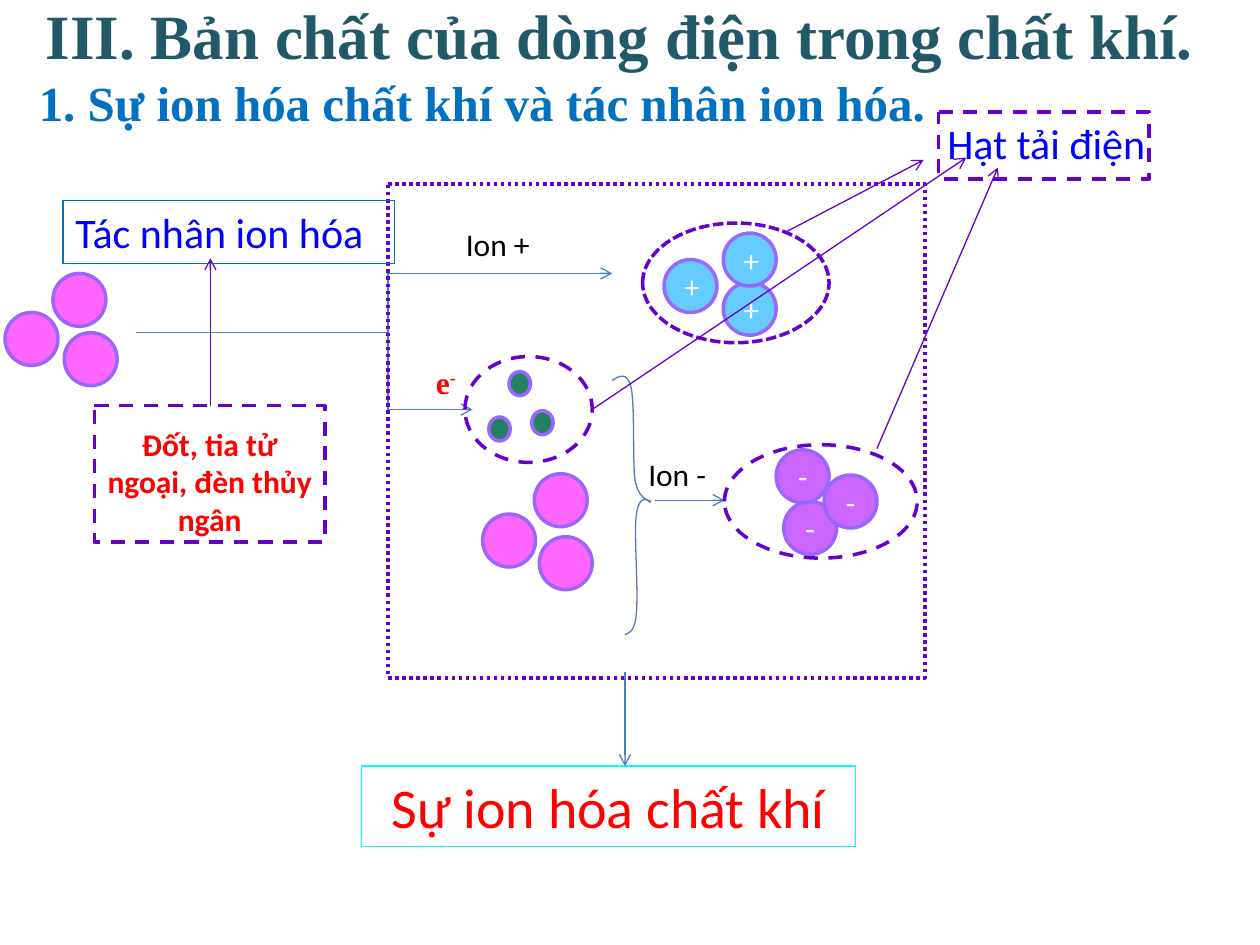
from lxml import etree
from pptx import Presentation
from pptx.dml.color import RGBColor
from pptx.enum.dml import MSO_LINE
from pptx.enum.shapes import MSO_CONNECTOR, MSO_SHAPE
from pptx.enum.text import MSO_ANCHOR, MSO_AUTO_SIZE, PP_ALIGN
from pptx.oxml.ns import qn
from pptx.util import Inches, Pt

COLORS = {
    "pink": "FF66FF", "sky": "66CCFF", "violet": "CC66FF", "green": "238162",
    "rim": "9966FF", "purple": "6600CC", "steel": "4B7EBC", "cyan": "00FFFF",
    "blue": "0070C0", "ink_blue": "0000FF", "red": "FF0000", "teal": "215968",
    "white": "FFFFFF", "black": "000000",
}
SERIF = "Times New Roman"
CURVE_STEPS = 12


def color(name):
    return RGBColor.from_string(COLORS[name])


class Diagram:
    """Holds the shared style and the current slide."""

    font = "Calibri"
    thin, thick = Pt(0.75), Pt(2)

    def __init__(self, page):
        self.page = page
        self.shapes = page.shapes

    def outline(self, shape, line, width, dash=None):
        shape.line.color.rgb = color(line)
        shape.line.width = width
        if dash:
            shape.line.dash_style = dash

    def shape(self, kind, place, line, width=thick, fill=None, dash=None):
        shape = self.shapes.add_shape(kind, *map(Inches, place))
        shape.shadow.inherit = False
        if fill:
            shape.fill.solid()
            shape.fill.fore_color.rgb = color(fill)
        else:
            shape.fill.background()
        self.outline(shape, line, width, dash)
        return shape

    def add_text(self, shape, text, size, ink, align=PP_ALIGN.CENTER,
                 anchor=MSO_ANCHOR.TOP, grow=True, bold=False, font=None):
        frame = shape.text_frame
        settings = {"word_wrap": True, "vertical_anchor": anchor}
        if grow:
            settings["auto_size"] = MSO_AUTO_SIZE.SHAPE_TO_FIT_TEXT
        for name, value in settings.items():
            setattr(frame, name, value)
        para = frame.paragraphs[0]
        para.alignment = align
        return self.span(para, text, size, ink, bold, font)

    def span(self, para, text, size, ink, bold=False, font=None):
        span = para.add_run()
        span.text = text
        style = {"name": font or self.font, "size": Pt(size), "bold": bold}
        for name, value in style.items():
            setattr(span.font, name, value)
        span.font.color.rgb = color(ink)
        return span

    def label(self, place, text, size, ink, **style):
        box = self.shapes.add_textbox(*map(Inches, place))
        self.add_text(box, text, size, ink, **style)
        return box

    def frame(self, place, text, size, ink, line, **style):
        box = self.shape(MSO_SHAPE.RECTANGLE, place, line, self.thin)
        self.add_text(box, text, size, ink, **style)

    def particles(self, corners, fill, sign=None, size=(0.42, 0.42)):
        for corner in corners:
            ball = self.shape(MSO_SHAPE.OVAL, (*corner, *size), "rim", fill=fill)
            if sign:
                self.add_text(ball, sign, 18, "white",
                              anchor=MSO_ANCHOR.MIDDLE, grow=False)

    def connect(self, start, end, line="steel", arrow=True):
        link = self.shapes.add_connector(
            MSO_CONNECTOR.STRAIGHT, *map(Inches, (*start, *end)))
        self.outline(link, line, self.thin)
        if arrow:
            etree.SubElement(link.get_or_add_ln(), qn("a:tailEnd"), type="arrow")
        etree.SubElement(link.element.spPr, qn("a:effectLst"))

    def curve(self, start, *segments):
        points, origin = [], start
        for first, second, end in segments:
            knots = (origin, first, second, end)
            for step in range(1, CURVE_STEPS + 1):
                t = step / CURVE_STEPS
                weights = ((1 - t) ** 3, 3 * t * (1 - t) ** 2,
                           3 * t ** 2 * (1 - t), t ** 3)
                points.append(tuple(
                    Inches(sum(w * knot[axis] for w, knot in zip(weights, knots)))
                    for axis in (0, 1)))
            origin = end
        builder = self.shapes.build_freeform(*map(Inches, start), scale=1.0)
        builder.add_line_segments(points, close=False)
        shape = builder.convert_to_shape()
        shape.shadow.inherit = False
        shape.fill.background()
        self.outline(shape, "steel", self.thin)


def main():
    deck = Presentation()
    deck.slide_width, deck.slide_height = Inches(10), Inches(7.5)
    diagram = Diagram(deck.slides.add_slide(deck.slide_layouts[6]))

    # Neutral molecules and positive ions
    diagram.particles([(0.42, 2.17), (0.04, 2.48), (0.51, 2.64)], "pink")
    diagram.particles([(4.24, 3.76), (4.28, 4.26), (3.83, 4.08)], "pink")
    diagram.particles([(5.74, 2.24), (5.27, 2.06), (5.74, 1.85)], "sky", "+")

    # Split of the molecules into ions and electrons
    diagram.connect((1.08, 2.64), (3.08, 2.64), arrow=False)
    diagram.connect((3.08, 2.17), (3.08, 3.25), arrow=False)
    diagram.connect((3.08, 2.17), (4.86, 2.17))
    diagram.connect((3.08, 3.25), (3.75, 3.25))
    diagram.particles([(4.04, 2.95), (3.88, 3.31), (4.22, 3.26)], "green",
                      size=(0.17, 0.19))

    # Brace joining electrons and molecules
    diagram.curve((4.86, 3.02),
                  ((4.92, 2.98), (4.98, 2.95), (5.01, 3.08)),
                  ((5.04, 3.21), (5.02, 3.66), (5.04, 3.81)),
                  ((5.07, 3.96), (5.13, 3.95), (5.16, 3.99)))
    diagram.curve((5.17, 3.98),
                  ((5.12, 3.96), (5.07, 3.94), (5.05, 4.09)),
                  ((5.03, 4.24), (5.07, 4.71), (5.05, 4.87)),
                  ((5.04, 5.03), (4.98, 5.02), (4.96, 5.04)))

    # Negative ions
    diagram.particles([(6.22, 3.98), (6.16, 3.57), (6.54, 3.77)], "violet", "-")

    # Particle labels
    electron = diagram.label((3.33, 2.83, 0.42, 0.4), "e", 18, "red",
                             bold=True, font=SERIF)
    charge = diagram.span(electron.text_frame.paragraphs[0], "-", 18, "red",
                          True, SERIF)
    charge.font._element.set("baseline", "30000")
    diagram.label((3.54, 1.74, 0.82, 0.4), "Ion +", 18, "black")
    diagram.label((5.01, 3.56, 0.73, 0.4), "Ion -", 18, "black")
    diagram.connect((5.2, 3.97), (5.75, 3.97))

    # Gas chamber and its result
    process = MSO_SHAPE.FLOWCHART_PROCESS
    diagram.shape(process, (3.08, 1.46, 4.26, 3.92), "purple",
                  dash=MSO_LINE.ROUND_DOT)
    diagram.frame((2.87, 6.08, 3.92, 0.64), "Sự ion hóa chất khí", 32, "red", "cyan")
    diagram.connect((4.96, 5.33), (4.96, 6.08))

    # Ionising agents
    diagram.label((0.75, 3.32, 1.83, 1.01), "Đốt, tia tử ngoại, đèn thủy ngân",
                  18, "red", bold=True)
    diagram.shape(process, (0.75, 3.22, 1.83, 1.08), "purple", dash=MSO_LINE.DASH)
    diagram.connect((1.67, 3.22), (1.67, 2.05), "purple")
    diagram.frame((0.5, 1.59, 2.63, 0.5), "Tác nhân ion hóa", 24, "ink_blue",
                  "blue", align=PP_ALIGN.LEFT)

    # Charge carriers: rings and the arrows to their label
    diagram.label((7.42, 0.88, 1.87, 0.5), "Hạt tải điện", 24, "ink_blue",
                  align=PP_ALIGN.LEFT)
    diagram.shape(process, (7.45, 0.89, 1.67, 0.53), "purple", dash=MSO_LINE.DASH)
    for place, dash in (((5.1, 1.77, 1.48, 0.95), MSO_LINE.SQUARE_DOT),
                        ((5.75, 3.53, 1.53, 0.9), MSO_LINE.DASH),
                        ((3.69, 2.83, 1.01, 0.84), MSO_LINE.DASH)):
        diagram.shape(MSO_SHAPE.OVAL, place, "purple", dash=dash)
    for start, end in (((6.22, 1.85), (7.33, 1.27)),
                       ((6.96, 3.56), (7.92, 1.33)),
                       ((4.7, 3.25), (7.67, 1.25))):
        diagram.connect(start, end, "purple")

    # Headings
    diagram.label((0.04, -0.08, 9.75, 0.71),
                  "III. Bản chất của dòng điện trong chất khí.", 36, "teal",
                  bold=True, font=SERIF)
    diagram.label((0.21, 0.53, 7.83, 0.57),
                  "1. Sự ion hóa chất khí và tác nhân ion hóa.", 28, "blue",
                  bold=True, font=SERIF, align=PP_ALIGN.LEFT)

    deck.save("out.pptx")


if __name__ == "__main__":
    main()
